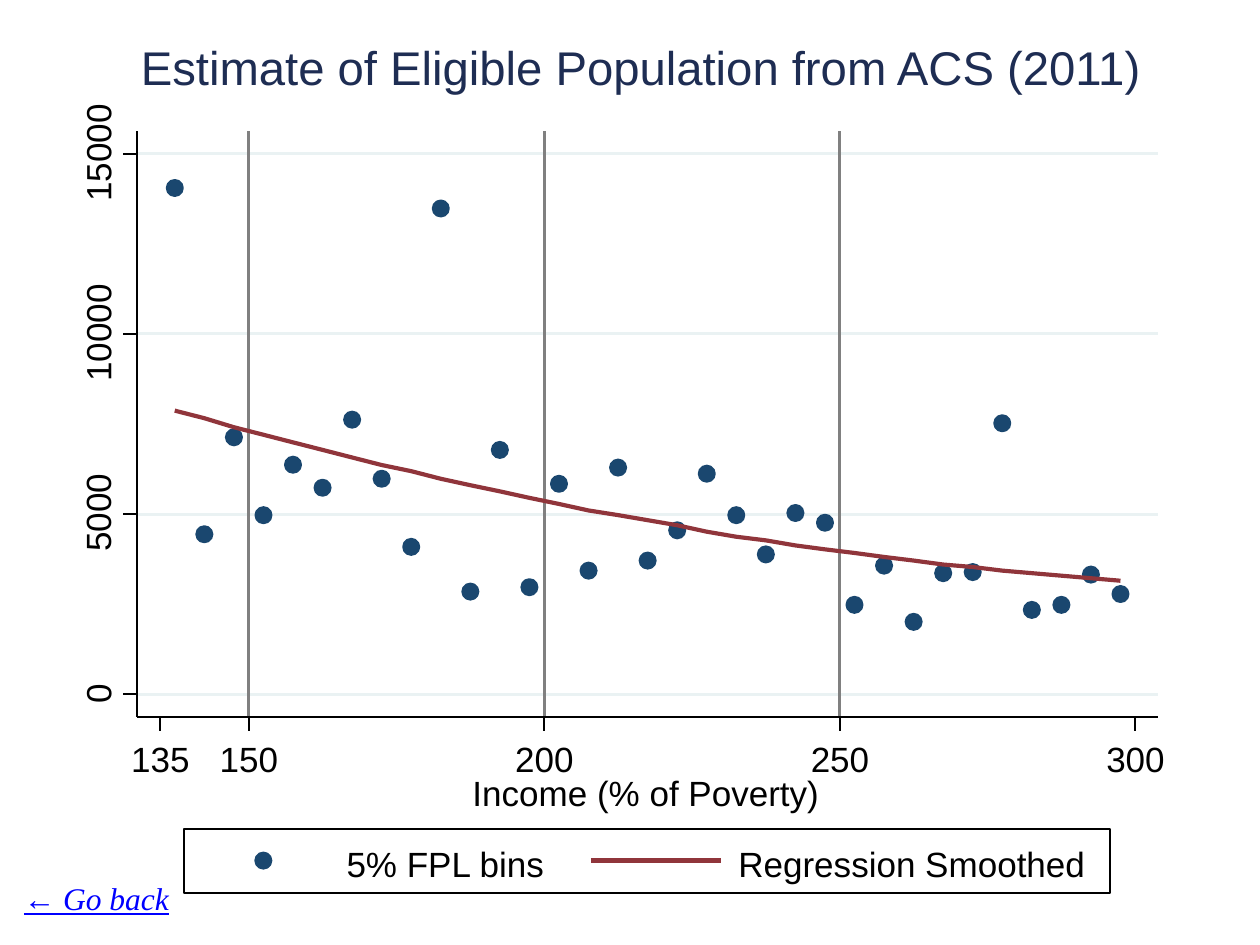
from dataclasses import dataclass

from lxml import etree
from pptx import Presentation
from pptx.dml.color import RGBColor
from pptx.enum.shapes import MSO_CONNECTOR, MSO_SHAPE
from pptx.enum.text import MSO_AUTO_SIZE, PP_ALIGN
from pptx.oxml.ns import qn
from pptx.util import Inches, Pt

STRAIGHT = MSO_CONNECTOR.STRAIGHT
RECTANGLE, OVAL = MSO_SHAPE.RECTANGLE, MSO_SHAPE.OVAL
GROW = MSO_AUTO_SIZE.SHAPE_TO_FIT_TEXT
LEFT, CENTER = PP_ALIGN.LEFT, PP_ALIGN.CENTER


@dataclass(frozen=True)
class Theme:
    white: str = "FFFFFF"
    black: str = "000000"
    title: str = "1E2D53"
    grid: str = "EAF2F3"
    threshold: str = "808080"
    bins: str = "1A476F"
    regression: str = "90353B"
    link: str = "0000FF"
    font: str = "Arial"
    link_font: str = "Times New Roman"
    title_size: float = 27
    label_size: float = 20
    link_size: float = 18
    axis_width: float = 1.25
    grid_width: float = 1.63
    curve_width: float = 2.38


THEME = Theme()

# Plot frame and axis scales, in inches
PLOT_LEFT, PLOT_TOP, PLOT_RIGHT, PLOT_BOTTOM = 1.09, 1.04, 9.19, 5.69
TICK = 0.11
MARKER = 0.12
LABEL_HEIGHT = 0.37
FIRST_INCOME, FIRST_INCOME_X, INCH_PER_INCOME = 135, 1.27, 7.74 / 165
ZERO_Y, INCH_PER_PERSON = 5.51, 1.43 / 5000

INCOME_TICKS = (135, 150, 200, 250, 300)
THRESHOLDS = (150, 200, 250)
POPULATION_LABEL_WIDTHS = {0: 0.28, 5000: 0.73, 10000: 0.89, 15000: 0.89}

FIRST_BIN, BIN_WIDTH = 137.5, 5
BIN_POPULATIONS = (
    14050, 4440, 7130, 4970, 6370, 5730, 7620, 5980, 4090, 13480, 2850,
    6780, 2970, 5840, 3430, 6290, 3710, 4550, 6120, 4970, 3880, 5030,
    4760, 2480, 3570, 2010, 3360, 3390, 7520, 2340, 2480, 3320, 2780,
)
SMOOTHED_POPULATIONS = (
    7870, 7660, 7410, 7200, 6990, 6780, 6570, 6360, 6190, 5980, 5800,
    5630, 5450, 5280, 5100, 4970, 4830, 4690, 4510, 4370, 4270, 4130,
    4020, 3920, 3810, 3710, 3600, 3530, 3430, 3360, 3290, 3220, 3150,
)


def income_x(income):
    return FIRST_INCOME_X + (income - FIRST_INCOME) * INCH_PER_INCOME


def population_y(population):
    return ZERO_Y - population * INCH_PER_PERSON


def bin_points(populations):
    """Slide positions of one value per income bin."""
    return [(income_x(FIRST_BIN + i * BIN_WIDTH), population_y(population))
            for i, population in enumerate(populations)]


def color(hex_value):
    return RGBColor.from_string(hex_value)


def style_line(line, hex_value, width):
    line.color.rgb = color(hex_value)
    line.width = Pt(width)


def add_line(shapes, start, end, hex_value, width):
    line = shapes.add_connector(STRAIGHT, *map(Inches, (*start, *end)))
    style_line(line.line, hex_value, width)
    etree.SubElement(line._element.spPr, qn("a:effectLst"))


def add_filled(shapes, kind, box, fill, outline, width):
    shape = shapes.add_shape(kind, *map(Inches, box))
    shape.shadow.inherit = False
    shape.fill.solid()
    shape.fill.fore_color.rgb = color(fill)
    style_line(shape.line, outline, width)


def add_marker(shapes, x, y):
    box = (x - MARKER / 2, y - MARKER / 2, MARKER, MARKER)
    add_filled(shapes, OVAL, box, THEME.bins, THEME.bins, THEME.grid_width)


def add_text(shapes, text, box, hex_value=THEME.black, wrap=False, inset=True,
             align=LEFT, rotation=0, **font_format):
    """Text box; inset=False removes the inner margins."""
    label = shapes.add_textbox(*map(Inches, box))
    label.rotation = rotation
    frame = label.text_frame
    frame.word_wrap = wrap
    frame.auto_size = GROW
    if not inset:
        for side in ("left", "top", "right", "bottom"):
            setattr(frame, f"margin_{side}", 0)
    paragraph = frame.paragraphs[0]
    paragraph.alignment = align
    run = paragraph.add_run()
    run.text = text
    run.font.color.rgb = color(hex_value)
    defaults = {"name": THEME.font, "size": Pt(THEME.label_size)}
    for attribute, value in {**defaults, **font_format}.items():
        setattr(run.font, attribute, value)


def add_plot_area(shapes):
    frame = (PLOT_LEFT, PLOT_TOP, PLOT_RIGHT - PLOT_LEFT, PLOT_BOTTOM - PLOT_TOP)
    add_filled(shapes, RECTANGLE, frame, THEME.white, THEME.white, THEME.axis_width)
    for population in POPULATION_LABEL_WIDTHS:
        y = population_y(population)
        add_line(shapes, (PLOT_LEFT, y), (PLOT_RIGHT, y), THEME.grid, THEME.grid_width)
    for income in THRESHOLDS:
        x = income_x(income)
        add_line(shapes, (x, PLOT_BOTTOM), (x, PLOT_TOP),
                 THEME.threshold, THEME.grid_width)


def add_regression_curve(shapes):
    start, *others = [(Inches(x), Inches(y))
                      for x, y in bin_points(SMOOTHED_POPULATIONS)]
    builder = shapes.build_freeform(*start)
    builder.add_line_segments(others, close=False)
    curve = builder.convert_to_shape()
    curve.shadow.inherit = False
    curve.fill.background()
    style_line(curve.line, THEME.regression, THEME.curve_width)


def add_population_axis(shapes):
    add_line(shapes, (PLOT_LEFT, PLOT_BOTTOM), (PLOT_LEFT, PLOT_TOP),
             THEME.black, THEME.axis_width)
    for population, width in POPULATION_LABEL_WIDTHS.items():
        y = population_y(population)
        add_line(shapes, (PLOT_LEFT, y), (PLOT_LEFT - TICK, y),
                 THEME.black, THEME.axis_width)
        box = (0.79 - width / 2, y - 0.25, width, LABEL_HEIGHT)
        add_text(shapes, str(population), box, inset=False, rotation=270)


def add_income_axis(shapes):
    add_line(shapes, (PLOT_LEFT, PLOT_BOTTOM), (PLOT_RIGHT, PLOT_BOTTOM),
             THEME.black, THEME.axis_width)
    for income in INCOME_TICKS:
        x = income_x(income)
        add_line(shapes, (x, PLOT_BOTTOM), (x, PLOT_BOTTOM + TICK),
                 THEME.black, THEME.axis_width)
        box = (x - 0.23, 5.85, 0.58, LABEL_HEIGHT)
        add_text(shapes, str(income), box, inset=False)


def add_legend(shapes):
    add_filled(shapes, RECTANGLE, (1.46, 6.58, 7.35, 0.51),
               THEME.white, THEME.black, THEME.axis_width)
    key_y = 6.83
    add_marker(shapes, 2.09, key_y)
    add_line(shapes, (4.69, key_y), (5.72, key_y), THEME.regression, THEME.curve_width)
    for text, left, width in (("5% FPL bins", 2.75, 1.68),
                              ("Regression Smoothed", 5.86, 2.85)):
        add_text(shapes, text, (left, 6.69, width, LABEL_HEIGHT), inset=False)


def main():
    presentation = Presentation()
    presentation.slide_width, presentation.slide_height = Inches(10), Inches(7.5)
    slide = presentation.slides.add_slide(presentation.slide_layouts[6])

    add_text(slide.shapes, "Estimate of Eligible Population from ACS (2011)",
             (0.58, 0.3, 9.01, 0.45), THEME.title, wrap=True, inset=False,
             align=CENTER, size=Pt(THEME.title_size))
    plot = slide.shapes.add_group_shape().shapes
    add_plot_area(plot)
    for x, y in bin_points(BIN_POPULATIONS):
        add_marker(plot, x, y)
    add_regression_curve(plot)
    add_population_axis(plot)
    add_income_axis(plot)
    add_legend(plot)
    add_text(slide.shapes, "← Go back", (0.09, 6.93, 1.51, 0.4), THEME.link,
             wrap=True, name=THEME.link_font, size=Pt(THEME.link_size),
             italic=True, underline=True)
    add_text(slide.shapes, "Income (% of Poverty)", (3.75, 6.12, 2.77, 0.34),
             inset=False)
    presentation.save("out.pptx")


if __name__ == "__main__":
    main()
